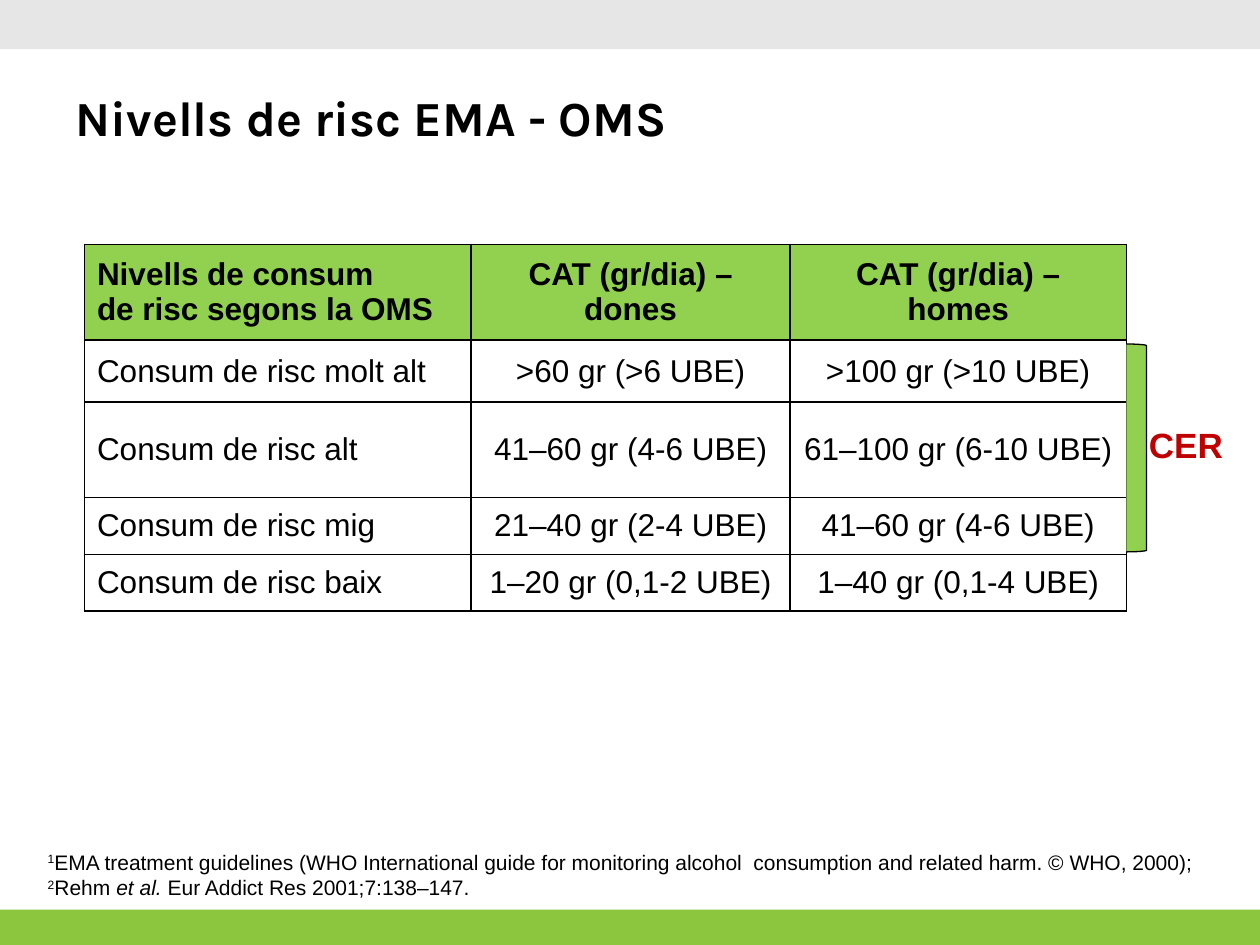
from dataclasses import dataclass

from lxml import etree
from pptx import Presentation
from pptx import util as u
from pptx.dml.color import RGBColor
from pptx.enum import shapes, text
from pptx.oxml.ns import qn

SLIDE_WIDTH, SLIDE_HEIGHT = u.Inches(10), u.Inches(7.5)
GRID_COLUMNS, GRID_ROWS = 100, 75
COLUMN_WIDTHS = (30.7, 25.3, 26.7)
ROW_HEIGHTS = (7.6, 4.9, 7.6, 4.5, 4.5)
RISK_LEVELS = (
    ("Nivells de consum\vde risc segons la OMS", "CAT (gr/dia) – dones", "CAT (gr/dia) – homes"),
    ("Consum de risc molt alt", ">60 gr (>6 UBE)", ">100 gr (>10 UBE)"),
    ("Consum de risc alt", "41–60 gr (4-6 UBE)", "61–100 gr (6-10 UBE)"),
    ("Consum de risc mig", "21–40 gr (2-4 UBE)", "41–60 gr (4-6 UBE)"),
    ("Consum de risc baix", "1–20 gr (0,1-2 UBE)", "1–40 gr (0,1-4 UBE)"),
)
REFERENCES = (
    ("1", "super"),
    ("EMA treatment guidelines (WHO International guide for monitoring alcohol  "
     "consumption and related harm. © WHO, 2000);", "plain"),
    ("\v", "break"),
    ("2", "super"),
    ("Rehm ", "plain"),
    ("et al. ", "italic"),
    ("Eur Addict Res 2001;7:138–147.", "plain"),
)


@dataclass(frozen=True)
class Theme:
    """Colours, fonts and type sizes of the slide."""
    ink: str = "000000"
    accent: str = "92D050"
    footer_band: str = "8CC63E"
    header_band: str = "E6E6E6"
    alert: str = "C00000"
    heading_font: str = "Karla"
    body_font: str = "Arial"
    title_size: int = 28
    label_size: int = 20
    table_size: int = 18
    reference_size: int = 12


THEME = Theme()


def across(columns):
    """Return the length of a number of grid columns."""
    return u.Emu(round(SLIDE_WIDTH * columns / GRID_COLUMNS))


def down(rows):
    """Return the length of a number of grid rows."""
    return u.Emu(round(SLIDE_HEIGHT * rows / GRID_ROWS))


def area(left, top, width, height):
    """Turn a grid area into slide lengths."""
    return across(left), down(top), across(width), down(height)


def style(paragraph, size, color=THEME.ink, bold=False, font=THEME.body_font):
    """Set the type of a whole paragraph."""
    paragraph.font.name = font
    paragraph.font.size = u.Pt(size)
    paragraph.font.bold = bold
    paragraph.font.color.rgb = RGBColor.from_string(color)


def add_title(slide, wording):
    """Place and format the slide title."""
    title = slide.shapes.title
    title.left, title.top, title.width, title.height = area(5, 3, 90, 12.5)
    title.text_frame.text = wording
    title.text_frame.vertical_anchor = text.MSO_ANCHOR.MIDDLE
    heading = title.text_frame.paragraphs[0]
    heading.alignment = text.PP_ALIGN.LEFT
    style(heading, THEME.title_size, bold=True, font=THEME.heading_font)


def add_filled(slide, kind, place, fill, line=None):
    """Add a filled preset shape, outlined if a line colour is given."""
    figure = slide.shapes.add_shape(kind, *area(*place))
    figure.shadow.inherit = False
    figure.fill.solid()
    figure.fill.fore_color.rgb = RGBColor.from_string(fill)
    if line:
        figure.line.color.rgb = RGBColor.from_string(line)
        figure.line.width = u.Pt(0.75)
    else:
        figure.line.fill.background()


def add_borders(cell):
    """Rule all four sides of a cell."""
    properties = cell._tc.get_or_add_tcPr()
    for side in ("lnL", "lnR", "lnT", "lnB"):
        rule = etree.SubElement(properties, qn(f"a:{side}"), w=str(u.Pt(1)))
        fill = etree.SubElement(rule, qn("a:solidFill"))
        etree.SubElement(fill, qn("a:srgbClr"), val=THEME.ink)


def fill_cell(cell, wording, is_header, is_label):
    """Write and format one table cell."""
    add_borders(cell)
    if is_header:
        cell.fill.solid()
        cell.fill.fore_color.rgb = RGBColor.from_string(THEME.accent)
    else:
        cell.fill.background()
    cell.margin_top = cell.margin_bottom = down(0.7)
    cell.vertical_anchor = text.MSO_ANCHOR.MIDDLE
    cell.text_frame.text = wording
    entry = cell.text_frame.paragraphs[0]
    entry.alignment = text.PP_ALIGN.LEFT if is_label else text.PP_ALIGN.CENTER
    style(entry, THEME.table_size, bold=is_header)


def add_risk_table(slide):
    """Add the table of risk levels."""
    place = area(6.7, 19.4, sum(COLUMN_WIDTHS), sum(ROW_HEIGHTS))
    table = slide.shapes.add_table(len(ROW_HEIGHTS), len(COLUMN_WIDTHS), *place).table
    table.first_row = table.horz_banding = False
    for column, width in zip(table.columns, COLUMN_WIDTHS):
        column.width = across(width)
    for r, (row, height) in enumerate(zip(table.rows, ROW_HEIGHTS)):
        row.height = down(height)
        for c, cell in enumerate(row.cells):
            fill_cell(cell, RISK_LEVELS[r][c], is_header=r == 0, is_label=c == 0)


def add_text_area(slide, place, wrap, anchor):
    """Add a text box and return its frame."""
    frame = slide.shapes.add_textbox(*area(*place)).text_frame
    frame.word_wrap = wrap
    frame.vertical_anchor = anchor
    frame.auto_size = text.MSO_AUTO_SIZE.SHAPE_TO_FIT_TEXT
    return frame


def add_references(slide):
    """Add the numbered sources at the foot of the slide."""
    frame = add_text_area(slide, (2.8, 66.9, 94.5, 5), True, text.MSO_ANCHOR.BOTTOM)
    sources = frame.paragraphs[0]
    style(sources, THEME.reference_size)
    for wording, role in REFERENCES:
        if role == "break":
            sources.add_line_break()
            continue
        run = sources.add_run()
        run.text = wording
        if role == "italic":
            run.font.italic = True
        elif role == "super":
            run.font._element.set("baseline", "30000")


def add_bracket_label(slide, wording):
    """Add the label beside the bracket."""
    frame = add_text_area(slide, (90.2, 33.1, 8, 4.4), False, text.MSO_ANCHOR.TOP)
    frame.text = wording
    style(frame.paragraphs[0], THEME.label_size, THEME.alert, bold=True)


def main():
    """Build and save the slide."""
    deck = Presentation()
    deck.slide_width, deck.slide_height = SLIDE_WIDTH, SLIDE_HEIGHT
    slide = deck.slides.add_slide(deck.slide_layouts[5])
    preset = shapes.MSO_SHAPE
    add_filled(slide, preset.RECTANGLE, (0, 72.2, GRID_COLUMNS, 2.8), THEME.footer_band)
    add_filled(slide, preset.RECTANGLE, (0, 0, GRID_COLUMNS, 3.9), THEME.header_band)
    add_title(slide, "Nivells de risc EMA - OMS")
    add_risk_table(slide)
    add_references(slide)
    add_bracket_label(slide, "CER")
    add_filled(slide, preset.RIGHT_BRACKET, (89.4, 27.3, 1.6, 16.5), THEME.accent, THEME.ink)
    deck.save("out.pptx")


if __name__ == "__main__":
    main()
